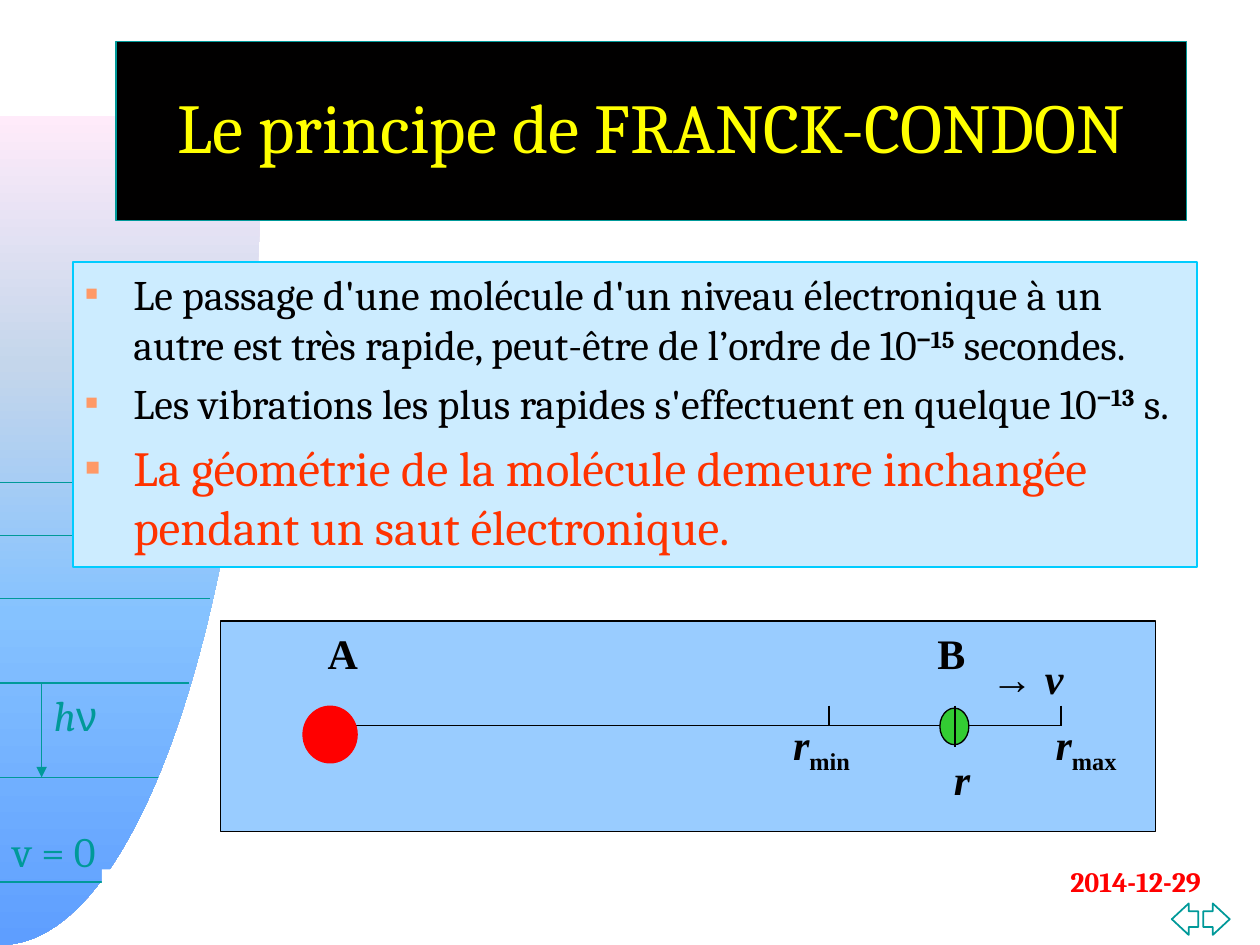
from lxml import etree
from pptx import Presentation
from pptx.dml.color import RGBColor
from pptx.enum.shapes import MSO_CONNECTOR, MSO_SHAPE
from pptx.enum.text import MSO_ANCHOR, PP_ALIGN
from pptx.oxml.ns import qn
from pptx.util import Inches, Pt

RECT, OVAL = MSO_SHAPE.RECTANGLE, MSO_SHAPE.OVAL
BACK, NEXT = MSO_SHAPE.LEFT_ARROW, MSO_SHAPE.RIGHT_ARROW
STRAIGHT = MSO_CONNECTOR.STRAIGHT
TOP, MIDDLE = MSO_ANCHOR.TOP, MSO_ANCHOR.MIDDLE
LEFT, CENTER, RIGHT = PP_ALIGN.LEFT, PP_ALIGN.CENTER, PP_ALIGN.RIGHT

INK, TEAL, WHITE = "010000", "009999", "FFFFFF"
SERIF, SANS, ROMAN = "Cambria", "Arial", "Times New Roman"


def color(code):
    return RGBColor.from_string(code)


def node(parent, tag, **attrs):
    item = etree.SubElement(parent, qn(tag))
    for key, value in attrs.items():
        item.set(key, str(value))
    return item


def add_box(slide, kind, at, fill, line=None, width=0.75):
    box = slide.shapes.add_shape(kind, *map(Inches, at))
    box.shadow.inherit = False
    box.fill.solid()
    box.fill.fore_color.rgb = color(fill)
    if line:
        box.line.color.rgb = color(line)
        box.line.width = Pt(width)
    else:
        box.line.fill.background()
    return box


def add_line(slide, x1, y1, x2, y2, hue=INK, arrow=False):
    line = slide.shapes.add_connector(STRAIGHT, *map(Inches, (x1, y1, x2, y2)))
    line.line.color.rgb = color(hue)
    line.line.width = Pt(0.75)
    props = line._element.spPr
    if arrow:
        node(props.find(qn("a:ln")), "a:tailEnd", type="triangle")
    node(props, "a:effectLst")


def add_runs(para, runs, size, hue, **base):
    """Each run is its text and the styles that differ from the base."""
    for text, diff in runs:
        style = {**base, **diff}
        run = para.add_run()
        run.text = text
        font = run.font
        font.size = Pt(style.get("size", size))
        font.color.rgb = color(hue)
        font.name = style.get("face", SERIF)
        font.bold = style.get("bold", False)
        font.italic = style.get("italic", False)
        if "shift" in style:
            font._element.set("baseline", str(style["shift"] * 1000))


def add_label(slide, at, runs, hue=INK, size=24, align=CENTER,
              anchor=MIDDLE, wrap=False, **base):
    box = slide.shapes.add_textbox(*map(Inches, at))
    frame = box.text_frame
    frame.word_wrap = wrap
    frame.vertical_anchor = anchor
    para = frame.paragraphs[0]
    para.alignment = align
    add_runs(para, runs, size, hue, **base)


def add_bullet(para):
    props = para._p.get_or_add_pPr()
    props.set("marL", str(Inches(0.38)))
    props.set("indent", str(-Inches(0.38)))
    node(node(props, "a:buClr"), "a:srgbClr", val="FF9966")
    node(props, "a:buSzPct", val=50000)
    node(props, "a:buFont", typeface=SANS)
    node(props, "a:buChar", char="■")


def add_curve(slide):
    """Quarter bell whose edge follows a cubic curve."""
    ends = [(0, 7.5), (1.15, 7.5), (2.08, 4.55), (2.08, 0.92)]
    steps = 60
    edge = []
    for i in range(steps + 1):
        t = i / steps
        parts = ((1 - t) ** 3, 3 * t * (1 - t) ** 2, 3 * t * t * (1 - t), t ** 3)
        edge.append(tuple(Inches(sum(w * p[k] for w, p in zip(parts, ends)))
                          for k in (0, 1)))
    path = slide.shapes.build_freeform(*edge[0])
    path.add_line_segments(edge[1:] + [(0, Inches(0.92))], close=True)
    bell = path.convert_to_shape()
    bell.shadow.inherit = False
    bell.line.fill.background()
    bell.fill.gradient()
    bell.fill.gradient_angle = 270
    stops = bell._element.spPr.find(qn("a:gradFill")).find(qn("a:gsLst"))
    for old in list(stops):
        stops.remove(old)
    for pos, hue in ((0, "FFEBFA"), (30, "C4D6EB"), (60, "85C2FF"), (100, "5E9EFF")):
        node(node(stops, "a:gs", pos=pos * 1000), "a:srgbClr", val=hue)


def add_scenery(slide):
    # Navigation arrows
    for kind, x in ((BACK, 9.3), (NEXT, 9.55)):
        arrow = add_box(slide, kind, (x, 7.17, 0.21, 0.25), WHITE, TEAL, 1)
        arrow.adjustments[1] = 0.64
    # Energy levels on the bell
    add_curve(slide)
    for y, end in ((7, 0.83), (6.17, 1.25), (5.42, 1.5),
                   (4.75, 1.67), (4.25, 1.75), (3.83, 1.83)):
        add_line(slide, 0, y, end, y, TEAL)
    add_line(slide, 0.33, 5.42, 0.33, 6.17, TEAL, arrow=True)
    add_label(slide, (0, 6.5, 0.89, 0.5), [("v = 0", {})], TEAL,
              align=LEFT, anchor=TOP)
    add_label(slide, (0.33, 5.42, 0.54, 0.5),
              [("h", {"italic": True}), ("ν", {"face": SANS})], TEAL,
              align=LEFT, anchor=TOP)
    # Date and footer patch
    add_label(slide, (8.13, 6.81, 1.5, 0.37), [("2014-12-29", {})], "FF0000",
              16, RIGHT, TOP, wrap=True, bold=True)
    add_box(slide, RECT, (0.81, 6.9, 1.76, 0.47), WHITE)


def add_title(slide):
    box = add_box(slide, RECT, (0.92, 0.33, 8.5, 1.42), INK, TEAL)
    frame = box.text_frame
    frame.word_wrap = True
    frame.vertical_anchor = MIDDLE
    para = frame.paragraphs[0]
    para.alignment = CENTER
    para.line_spacing = 0.9
    add_runs(para, [("Le principe de FRANCK-CONDON", {})], 40, "FFFF00")


def add_body(slide):
    def power(text, digits, rest):
        high = {"bold": True, "shift": 30}
        return [(text, {}), ("−", {**high, "face": SANS}), (digits, high), (rest, {})]

    points = [
        (power("Le passage d'une molécule d'un niveau électronique à un autre "
               "est très rapide, peut-être de l’ordre de 10", "15", " secondes."),
         24, INK),
        (power("Les vibrations les plus rapides s'effectuent en quelque 10",
               "13", " s."), 24, INK),
        ([("La géométrie de la molécule demeure inchangée pendant un saut "
           "électronique.", {})], 28, "FF3300"),
    ]
    box = add_box(slide, RECT, (0.58, 2.08, 8.92, 2.42), "CCECFF", "00CCFF")
    frame = box.text_frame
    frame.word_wrap = True
    frame.vertical_anchor = TOP
    for i, (runs, size, hue) in enumerate(points):
        para = frame.add_paragraph() if i else frame.paragraphs[0]
        para.alignment = LEFT
        if i:
            para.space_before = Pt(size * 0.2)
        add_bullet(para)
        add_runs(para, runs, size, hue)


def add_model(slide):
    # Panel, bond axis and range ticks
    add_box(slide, RECT, (1.75, 4.93, 7.42, 1.67), "99CCFF", INK)
    add_line(slide, 2.67, 5.76, 8.42, 5.76)
    for x in (8.42, 6.58):
        add_line(slide, x, 5.6, x, 5.76)
    # Atoms
    add_box(slide, OVAL, (2.4, 5.6, 0.44, 0.46), "FF0000")
    add_box(slide, OVAL, (7.46, 5.62, 0.23, 0.29), "33CC33", INK)
    # Labels
    slant = {"italic": True}
    low = {"shift": -25}
    labels = [
        ((2.5, 4.93, 0.44, 0.5), [("A", {})]),
        ((7.34, 4.93, 0.42, 0.5), [("B", {})]),
        ((6.17, 5.68, 0.7, 0.5), [("r", slant), ("min", low)]),
        ((8.25, 5.68, 0.74, 0.5), [("r", slant), ("max", low)]),
        ((7.47, 5.93, 0.33, 0.5), [("r", slant)]),
        ((7.66, 5.07, 0.88, 0.57),
         [(" ", {"face": SANS, "size": 28}), ("→ ", {"face": SANS}), ("v", slant)]),
    ]
    for at, runs in labels:
        add_label(slide, at, runs, face=ROMAN, bold=True)
    # Mark of the present distance
    add_line(slide, 7.58, 5.6, 7.58, 5.93)


def main():
    deck = Presentation()
    deck.slide_width, deck.slide_height = Inches(10), Inches(7.5)
    slide = deck.slides.add_slide(deck.slide_layouts[6])
    add_scenery(slide)
    add_title(slide)
    add_body(slide)
    add_model(slide)
    deck.save("out.pptx")


if __name__ == "__main__":
    main()
